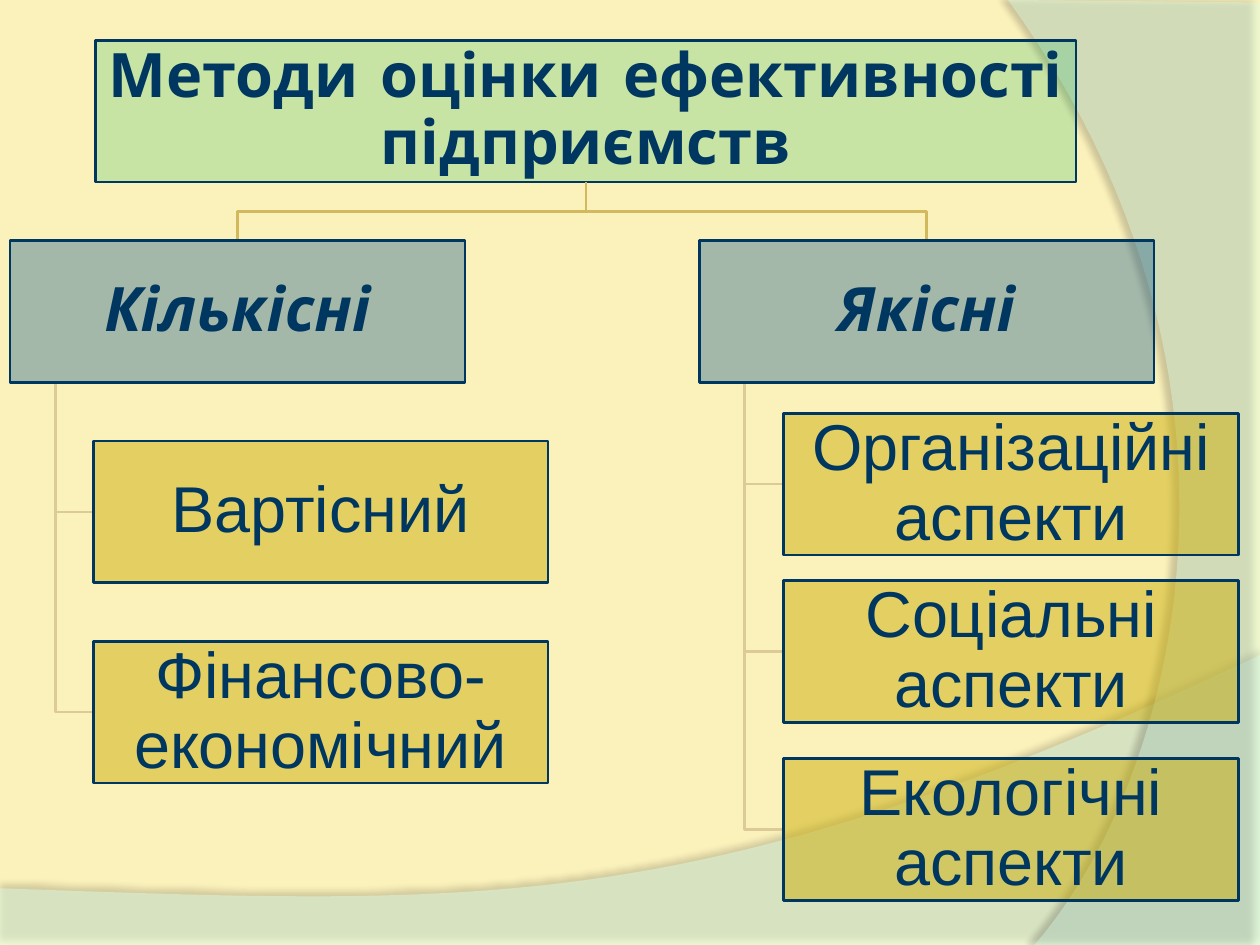
from dataclasses import dataclass

from lxml.etree import SubElement
from pptx import Presentation
from pptx.dml.color import RGBColor
from pptx.enum.shapes import MSO_SHAPE
from pptx.enum.text import MSO_ANCHOR, MSO_AUTO_SIZE, PP_ALIGN
from pptx.oxml.ns import qn
from pptx.util import Inches, Pt

Point = tuple[float, float]

WIDTH, HEIGHT = 10, 7.5
BOX_WIDTH, BOX_HEIGHT = 0.361 * WIDTH, 0.15 * HEIGHT
ROOT_TOP, GROUP_TOP = 0.32, 1.91
ROOT_LEFT, ROOT_WIDTH = 0.76, 7.78

CREAM = RGBColor(0xFB, 0xF1, 0xBB)
MINT = RGBColor(0xDD, 0xFF, 0xEC)
PALE_MINT = RGBColor(0xD9, 0xFF, 0xEA)
NAVY = RGBColor(0x00, 0x37, 0x60)
GREEN = RGBColor(0x00, 0xB0, 0x50)
BLUE = RGBColor(0x00, 0x4F, 0x89)
GOLD = RGBColor(0xCC, 0xAF, 0x0A)
ROOT_LINE = RGBColor(0xD2, 0xB9, 0x5E)
LEAF_LINE = RGBColor(0xDD, 0xCB, 0x97)


@dataclass(frozen=True)
class BoxStyle:
    fill: RGBColor
    opacity: int
    font: str
    size: int
    inset: float
    bold: bool = False
    italic: bool = False


@dataclass(frozen=True)
class Leaf:
    text: str
    top: float


@dataclass(frozen=True)
class Group:
    text: str
    left: float
    leaf_left: float
    leaves: tuple[Leaf, ...]

    @property
    def center(self) -> float:
        return self.left + BOX_WIDTH / 2

    @property
    def trunk(self) -> float:
        return self.left + BOX_WIDTH / 10


ROOT_STYLE = BoxStyle(GREEN, 20, "Comic Neue", 35, 0.02, bold=True)
GROUP_STYLE = BoxStyle(BLUE, 35, "Comic Neue", 35, 0.02, bold=True, italic=True)
LEAF_STYLE = BoxStyle(GOLD, 50, "Arial", 37, 0.03)

GROUPS = (
    Group("Кількісні", 0.08, 0.74, (
        Leaf("Вартісний", 3.5),
        Leaf("Фінансово-економічний", 5.09),
    )),
    Group("Якісні", 5.55, 6.22, (
        Leaf("Організаційні аспекти", 3.28),
        Leaf("Соціальні аспекти", 4.61),
        Leaf("Екологічні аспекти", 6.02),
    )),
)


def set_fill(shape, color: RGBColor, opacity: int) -> None:
    shape.fill.solid()
    shape.fill.fore_color.rgb = color
    srgb = shape._element.spPr.find(qn("a:solidFill")).find(qn("a:srgbClr"))
    SubElement(srgb, qn("a:alpha"), val=str(opacity * 1000))


def add_shadow(shape, opacity: int, distance: float, angle: int) -> None:
    effects = shape._element.spPr.find(qn("a:effectLst"))
    outer = SubElement(effects, qn("a:outerShdw"), blurRad=str(Pt(4)),
                       dist=str(Pt(distance)), dir=str(angle * 60000),
                       algn="ctr", rotWithShape="0")
    srgb = SubElement(outer, qn("a:srgbClr"), val="000000")
    SubElement(srgb, qn("a:alpha"), val=str(opacity * 1000))


def curve(*controls: Point, steps: int = 48) -> list[Point]:
    """Points along a cubic Bezier curve with four control points."""
    points = []
    for step in range(steps + 1):
        t = step / steps
        weights = ((1 - t) ** 3, 3 * t * (1 - t) ** 2, 3 * t**2 * (1 - t), t**3)
        x, y = (sum(w * c[axis] for w, c in zip(weights, controls))
                for axis in (0, 1))
        points.append((x, y))
    return points


def add_path(page, points: list[Point], close: bool):
    start, *rest = [(Inches(x), Inches(y)) for x, y in points]
    builder = page.shapes.build_freeform(*start)
    builder.add_line_segments(rest, close=close)
    shape = builder.convert_to_shape()
    shape.shadow.inherit = False
    return shape


def add_wave(page, points: list[Point], color: RGBColor, opacity: int):
    wave = add_path(page, points, close=True)
    set_fill(wave, color, opacity)
    wave.line.fill.background()
    return wave


def add_link(page, points: list[Point], color: RGBColor) -> None:
    link = add_path(page, points, close=False)
    link.fill.background()
    link.line.color.rgb = color
    link.line.width = Pt(1.5)


def format_box(box, text: str, style: BoxStyle) -> None:
    set_fill(box, style.fill, style.opacity)
    box.line.color.rgb = NAVY
    box.line.width = Pt(1.5)
    frame = box.text_frame
    frame.text = text
    frame.word_wrap = True
    frame.auto_size = MSO_AUTO_SIZE.NONE
    frame.vertical_anchor = MSO_ANCHOR.MIDDLE
    frame.margin_left = frame.margin_right = Inches(style.inset)
    frame.margin_top = frame.margin_bottom = Inches(style.inset)
    para = frame.paragraphs[0]
    para.alignment = PP_ALIGN.CENTER
    para.line_spacing = 0.9
    font = para.font
    font.name, font.size = style.font, Pt(style.size)
    font.bold, font.italic = style.bold, style.italic
    font.color.rgb = NAVY


def add_box(page, text: str, left: float, top: float, style: BoxStyle) -> None:
    box = page.shapes.add_shape(MSO_SHAPE.RECTANGLE, Inches(left), Inches(top),
                                Inches(BOX_WIDTH), Inches(BOX_HEIGHT))
    box.shadow.inherit = False
    format_box(box, text, style)


def add_title(page, text: str) -> None:
    title = page.shapes.title
    title.left, title.top = Inches(ROOT_LEFT), Inches(ROOT_TOP)
    title.width, title.height = Inches(ROOT_WIDTH), Inches(BOX_HEIGHT)
    format_box(title, text, ROOT_STYLE)
    page.shapes._spTree.append(title._element)  # bring in front of the waves


def add_backdrop(page) -> None:
    page.background.fill.solid()
    page.background.fill.fore_color.rgb = CREAM
    bottom = curve((WIDTH, 5.2), (5.59, 7.29), (3.91, 7.19), (0, 7.05))
    wave = add_wave(page, [(0, HEIGHT), (WIDTH, HEIGHT), *bottom], MINT, 45)
    add_shadow(wave, 35, 3.5, 270)
    side = curve((8.21, HEIGHT), (9.35, 6.19), (10.18, 3), (8, 0))
    wave = add_wave(page, [(WIDTH, 0.02), (WIDTH, HEIGHT), *side], PALE_MINT, 40)
    add_shadow(wave, 45, 4, 180)


def add_group(page, group: Group) -> None:
    root_center, root_bottom = ROOT_LEFT + ROOT_WIDTH / 2, ROOT_TOP + BOX_HEIGHT
    bend = (root_bottom + GROUP_TOP) / 2
    add_link(page, [(root_center, root_bottom), (root_center, bend),
                    (group.center, bend), (group.center, GROUP_TOP)], ROOT_LINE)
    for leaf in group.leaves:
        middle = leaf.top + BOX_HEIGHT / 2
        add_link(page, [(group.trunk, GROUP_TOP + BOX_HEIGHT),
                        (group.trunk, middle), (group.leaf_left, middle)], LEAF_LINE)
    add_box(page, group.text, group.left, GROUP_TOP, GROUP_STYLE)
    for leaf in group.leaves:
        add_box(page, leaf.text, group.leaf_left, leaf.top, LEAF_STYLE)


def main() -> None:
    deck = Presentation()
    deck.slide_width, deck.slide_height = Inches(WIDTH), Inches(HEIGHT)
    page = deck.slides.add_slide(deck.slide_layouts.get_by_name("Title Only"))
    add_backdrop(page)
    add_title(page, "Методи оцінки ефективності підприємств")
    for group in GROUPS:
        add_group(page, group)
    deck.save("out.pptx")


if __name__ == "__main__":
    main()
